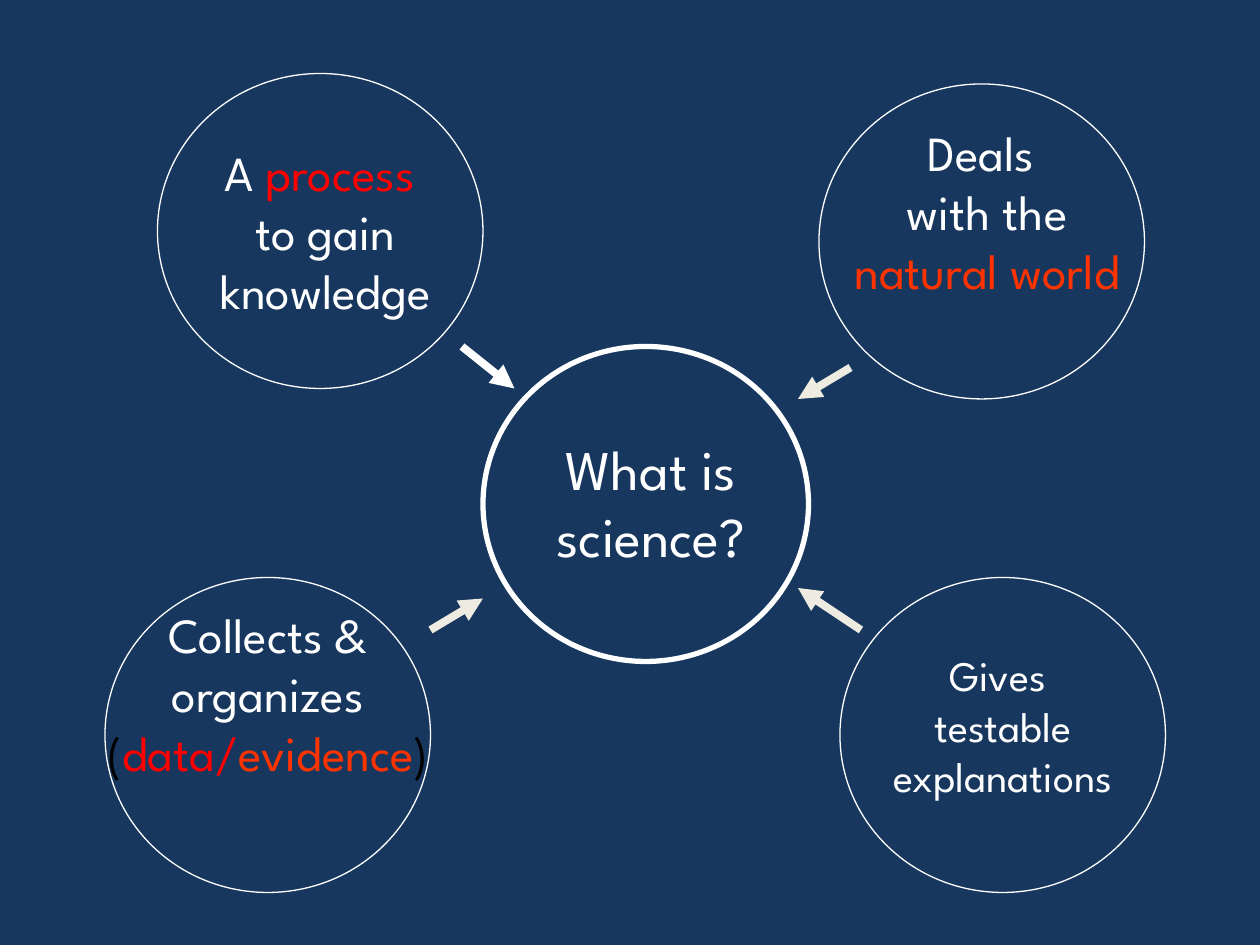
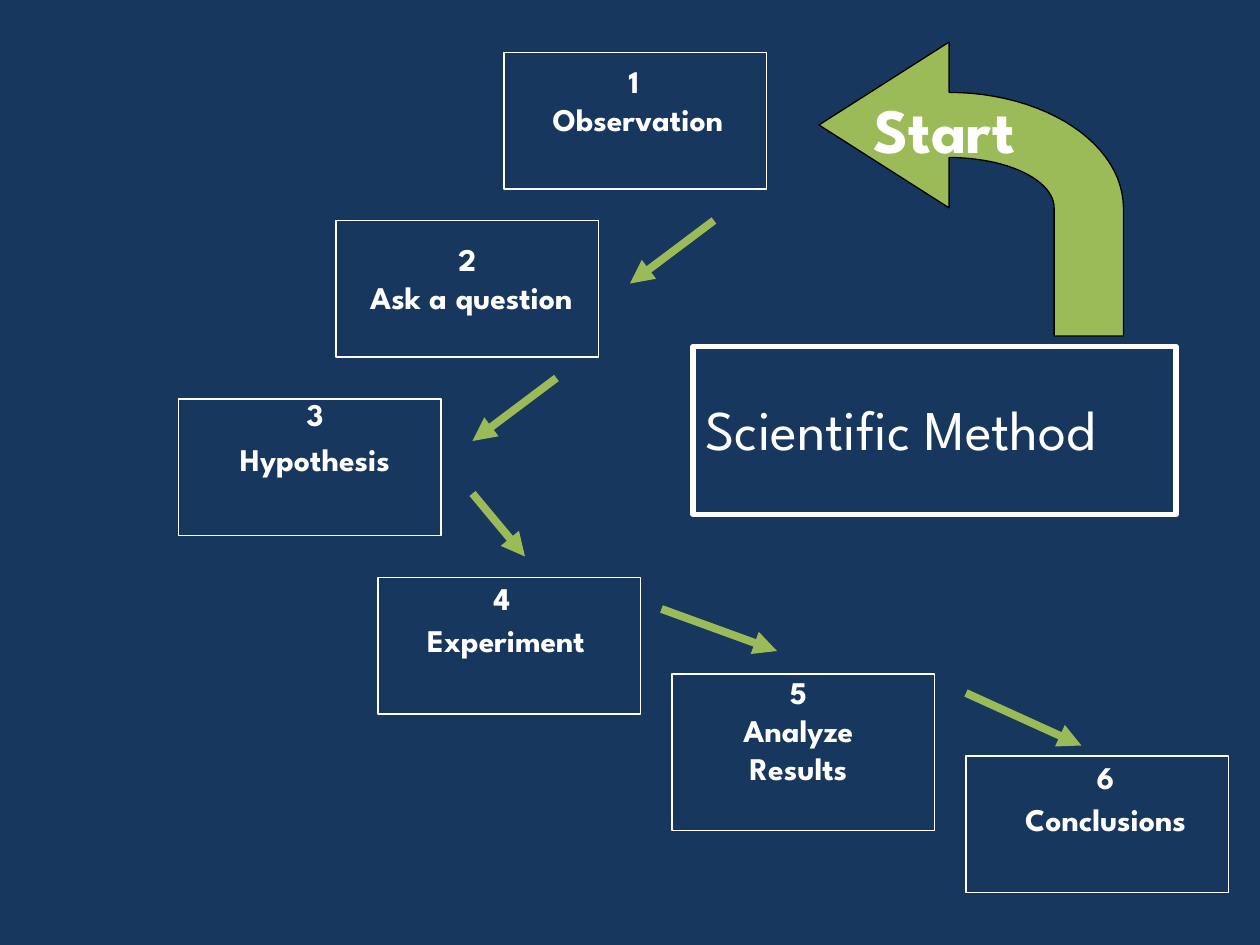
import math

from lxml import etree
from pptx import Presentation
from pptx import util as u
from pptx.dml.color import RGBColor
from pptx.enum import shapes, text
from pptx.oxml import ns

COLS, ROWS = 120, 90
WIDTH, HEIGHT = u.Inches(10), u.Inches(7.5)
FONT = "League Spartan"
COLORS = {
    "navy": "17375E",
    "white": "FFFFFF",
    "cream": "EEECE1",
    "red": "FF0000",
    "orange": "FF3300",
    "green": "9BBB59",
    "black": "000000",
}
TITLE_ONLY = 5

IDEAS = [
    dict(box=(78, 8, 31, 30), text_box=(1, 3.1, 30, 23.9), size=28,
         paras=["Deals ", ["with the ", ("natural world", "orange")]],
         arrow=((3, 27), (-2, 30)), color="cream"),
    dict(box=(15, 7, 31, 30), text_box=(2, 6, 28, 18), size=28,
         paras=[["A ", ("process ", "red")], "to gain knowledge"],
         arrow=((29, 26), (34, 30)), color="white"),
    dict(box=(10, 55, 31, 30), text_box=(-1, 2, 33, 23.9), size=28,
         paras=[["Collects & organizes ", ("(", "black"), ("data/", "red"),
                 ("evidence", "orange"), (")", "black")]],
         arrow=((31, 5), (36, 2)), color="cream"),
    dict(box=(80, 55, 31, 30), text_box=(1, 6.3, 29, 15.7), size=24,
         paras=["Gives ", "testable", "explanations"],
         arrow=((2, 5), (-4, 1)), color="cream"),
]

STEPS = [
    dict(box=(48, 5, 25, 13), text_box=(1, 1, 23.5, 11.5),
         paras=["1 ", "Observation"], spacing=0.8),
    dict(box=(32, 21, 25, 13), text_box=(-3, 2, 31, 11.5),
         paras=["2", " Ask a question"], spacing=0.8, arrow=((36, 0), (28, 6))),
    dict(box=(17, 38, 25, 13), text_box=(2.3, -1, 21.4, 13.6),
         paras=["3", "Hypothesis"], spacing=1.0, arrow=((36, -2), (28, 4))),
    dict(box=(36, 55, 25, 13), text_box=(1.9, 0, 19.8, 12.6),
         paras=["4", " Experiment"], spacing=0.9, arrow=((9, -8), (14, -2))),
    dict(box=(64, 64.2, 25, 14.9), text_box=(4.5, 0, 15.1, 15.1),
         paras=["5", " Analyze ", "Results"], spacing=0.8,
         arrow=((-1, -6.2), (10, -2.2))),
    dict(box=(92, 72, 25, 13), text_box=(3, 0, 20.6, 12.6),
         paras=["6", "Conclusions"], spacing=0.9, arrow=((0, -6), (11, -1))),
]


def rgb(name):
    """Return a palette colour."""
    return RGBColor.from_string(COLORS[name])


def place(x, y):
    """Convert grid columns and rows to a slide position."""
    return u.Emu(round(x * WIDTH / COLS)), u.Emu(round(y * HEIGHT / ROWS))


def within(box, part):
    """Return the slide position and size of a part inside a box."""
    return *place(box[0] + part[0], box[1] + part[1]), *place(*part[2:])


def write(sp, paras, size=18, bold=False, align="CENTER", spacing=None, before=0):
    """Fill a shape with paragraphs of plain or coloured runs."""
    tf = sp.text_frame
    tf.word_wrap = True
    tf.auto_size = text.MSO_AUTO_SIZE.NONE
    tf.vertical_anchor = text.MSO_ANCHOR.TOP
    for i, runs in enumerate(paras):
        p = tf.add_paragraph() if i else tf.paragraphs[0]
        p.alignment = getattr(text.PP_ALIGN, align)
        p.space_before = u.Pt(before)
        if spacing:
            p.line_spacing = spacing
        for run in [runs] if isinstance(runs, str) else runs:
            words, color = (run, "white") if isinstance(run, str) else run
            r = p.add_run()
            r.text = words
            r.font.name, r.font.size, r.font.bold = FONT, u.Pt(size), bold
            r.font.color.rgb = rgb(color)


def outline(s, kind, box, width=0.75):
    """Draw an unfilled white outline."""
    sp = s.shapes.add_shape(kind, *place(*box[:2]), *place(*box[2:]))
    sp.shadow.inherit = False
    sp.fill.background()
    sp.line.color.rgb = rgb("white")
    sp.line.width = u.Pt(width)


def arrow(s, box, start, end, color):
    """Draw an arrow between two points relative to a box."""
    ends = [place(box[0] + x, box[1] + y) for x, y in (start, end)]
    c = s.shapes.add_connector(shapes.MSO_CONNECTOR.STRAIGHT, *ends[0], *ends[1])
    c.line.color.rgb = rgb(color)
    c.line.width = u.Pt(4.5)
    etree.SubElement(c.line._get_or_add_ln(), ns.qn("a:tailEnd"), type="triangle")
    etree.SubElement(c._element.spPr, ns.qn("a:effectLst"))


def label(s, box, part, paras, **fmt):
    """Add a text box placed inside a box."""
    write(s.shapes.add_textbox(*within(box, part)), paras, **fmt)


def titled_frame(s, kind, box, part, title, **fmt):
    """Put the slide title in a heavy outline."""
    outline(s, kind, box, width=3)
    sp = s.shapes.title
    sp.left, sp.top, sp.width, sp.height = within(box, part)
    write(sp, [title], size=32, **fmt)


def idea(s, box, text_box, paras, size, arrow_ends, color):
    """Draw an idea circle with its arrow to the centre."""
    arrow(s, box, *arrow_ends, color)
    outline(s, shapes.MSO_SHAPE.OVAL, box)
    label(s, box, text_box, paras, size=size)


def step(s, box, text_box, paras, spacing, arrow_ends=None):
    """Draw a numbered step with the arrow that leads to it."""
    outline(s, shapes.MSO_SHAPE.RECTANGLE, box)
    label(s, box, text_box, paras, bold=True, spacing=spacing, before=4.3)
    if arrow_ends:
        arrow(s, box, *arrow_ends, "green")


def quarter(cx, cy, rx, ry, count=24):
    """List points of a quarter ellipse from its top to its right end."""
    angles = [math.pi / 2 * i / count for i in range(count + 1)]
    return [(cx + rx * math.sin(a), cy - ry * math.cos(a)) for a in angles]


def start_arrow(s, box):
    """Draw the curved start arrow and its label."""
    left, top, width, height = box
    neck, head = 12.4, 15.8
    points = [(0, head / 2), (neck, 0), *quarter(neck, head, width - neck, 11),
              (width, height), (neck + 10, height),
              *reversed(quarter(neck, head, 10, 4.8)), (neck, head)]
    points = [place(left + x, top + y) for x, y in points]
    builder = s.shapes.build_freeform(*points[0])
    builder.add_line_segments(points[1:], close=True)
    sp = builder.convert_to_shape()
    sp.shadow.inherit = False
    sp.fill.solid()
    sp.fill.fore_color.rgb = rgb("green")
    sp.line.color.rgb = rgb("black")
    sp.line.width = u.Pt(0.75)
    label(s, box, (4, 4, 17, 8.4), ["Start"], size=36, bold=True, align="LEFT")


def science_slide(s):
    """Build the slide of ideas around a question."""
    titled_frame(s, shapes.MSO_SHAPE.OVAL, (46, 33, 31, 30), (2, 7.8, 28, 14.2),
                 "What is science?")
    for i in IDEAS:
        idea(s, i["box"], i["text_box"], i["paras"], i["size"], i["arrow"], i["color"])


def method_slide(s):
    """Build the slide of steps in the method."""
    titled_frame(s, shapes.MSO_SHAPE.RECTANGLE, (66, 33, 46, 16), (0, 4, 47.9, 7.7),
                 "Scientific Method", align="LEFT")
    for i in STEPS:
        step(s, i["box"], i["text_box"], i["paras"], i["spacing"], i.get("arrow"))
    start_arrow(s, (78, 4, 29, 28))


def main():
    """Build and save the presentation."""
    prs = Presentation()
    prs.slide_width, prs.slide_height = WIDTH, HEIGHT
    fill = prs.slide_master.background.fill
    fill.solid()
    fill.fore_color.rgb = rgb("navy")
    for build in (science_slide, method_slide):
        build(prs.slides.add_slide(prs.slide_layouts[TITLE_ONLY]))
    prs.save("out.pptx")


if __name__ == "__main__":
    main()
